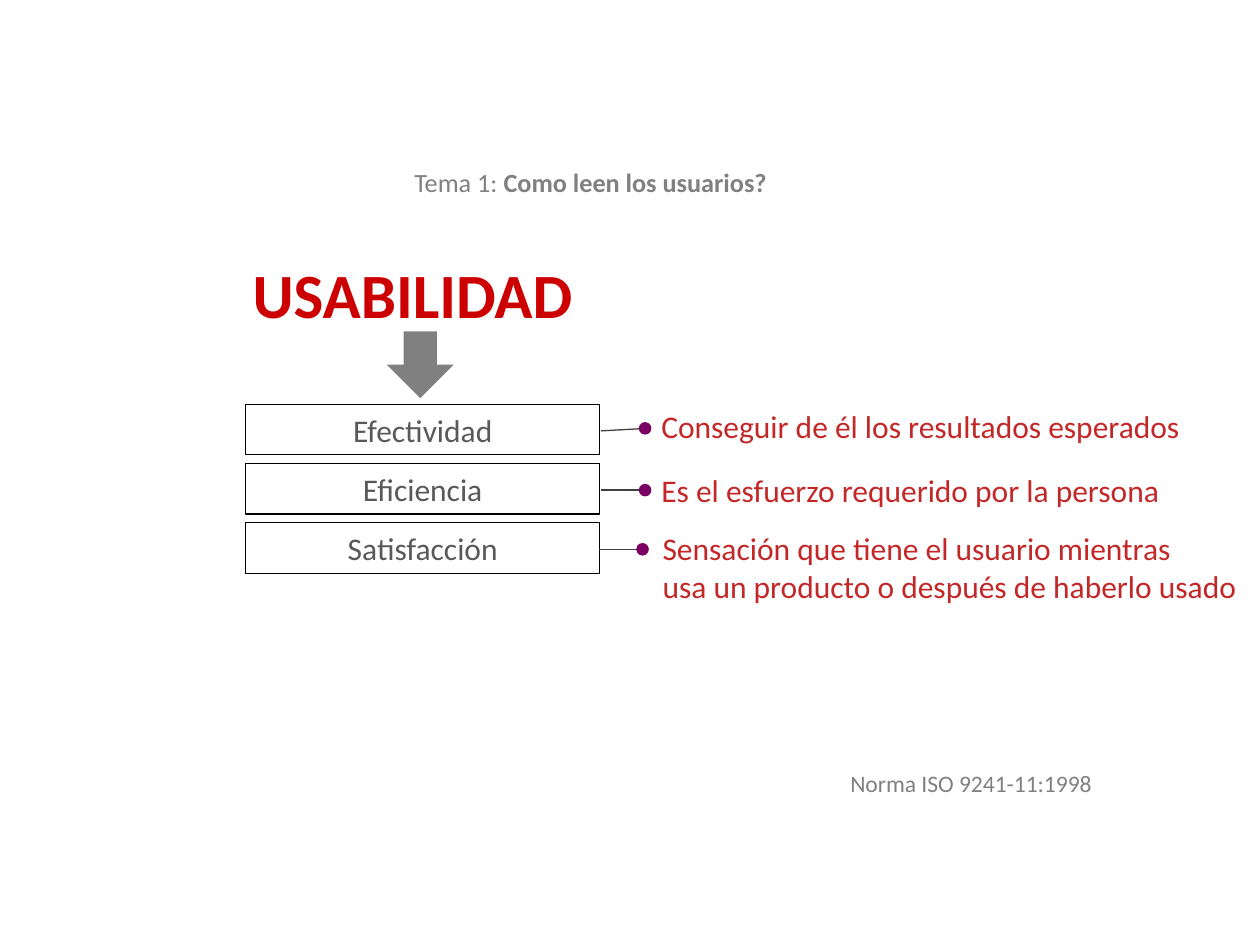
from typing import NamedTuple

from pptx import Presentation
from pptx.dml.color import RGBColor
from pptx.enum.shapes import MSO_CONNECTOR, MSO_SHAPE as Preset
from pptx.enum.text import MSO_ANCHOR as Anchor, MSO_AUTO_SIZE as AutoSize, PP_ALIGN as Align
from pptx.oxml.ns import qn
from pptx.util import Inches, Pt
from lxml.etree import SubElement

WIDTH, HEIGHT = 10, 7.5
RED, CRIMSON, GRAY, DARK_GRAY = "CC0000", "C32727", "808080", "595959"
PURPLE, LINE_GRAY, BLACK, WHITE = "7A0063", "404040", "000000", "FFFFFF"

BOX_LEFT, BOX_WIDTH, BOX_HEIGHT = 1.95, 2.81, 0.4
FIRST_ROW, ROW_STEP = 3.21, 0.47
DOT = 0.1


class Span(NamedTuple):
    text: str
    bold: bool = False


class Place(NamedTuple):
    left: float
    top: float
    width: float
    height: float


class Quality(NamedTuple):
    name: str
    meaning: list[str]
    note: Place
    line_start: float
    line_end: float
    dot_left: float
    dot_rise: float = 0


QUALITIES = [
    Quality("Efectividad", ["Conseguir de él los resultados esperados"],
            Place(5.15, 3.18, 4.37, 0.4), 4.77, 5.13, 5.07, 0.02),
    Quality("Eficiencia", ["Es el esfuerzo requerido por la persona"],
            Place(5.15, 3.69, 4.2, 0.4), 4.77, 5.13, 5.07),
    Quality("Satisfacción", ["Sensación que tiene el usuario mientras",
                             "usa un producto o después de haberlo usado"],
            Place(5.16, 4.15, 4.82, 0.71), 4.75, 5.12, 5.05),
]


def color(value: str) -> RGBColor:
    return RGBColor.from_string(value)


def inches(place: Place) -> list[int]:
    return [Inches(length) for length in place]


def write(shape, lines: list[list[Span]], size: float, ink: str,
          align=Align.LEFT, wrap: bool = True, anchor=Anchor.TOP) -> None:
    frame = shape.text_frame
    frame_format = {"word_wrap": wrap, "auto_size": AutoSize.NONE,
                    "vertical_anchor": anchor}
    for name, value in frame_format.items():
        setattr(frame, name, value)
    for index, spans in enumerate(lines):
        para = frame.add_paragraph() if index else frame.paragraphs[0]
        para.alignment = align
        for span in spans:
            run = para.add_run()
            run.text = span.text
            font_format = {"name": "Calibri", "size": Pt(size), "bold": span.bold}
            for name, value in font_format.items():
                setattr(run.font, name, value)
            run.font.color.rgb = color(ink)


def add_note(page, place: Place, lines: list[list[Span]], size: float, ink: str) -> None:
    write(page.shapes.add_textbox(*inches(place)), lines, size, ink, wrap=False)


def add_figure(page, preset, place: Place, fill: str, outline: str | None = None):
    figure = page.shapes.add_shape(preset, *inches(place))
    figure.shadow.inherit = False
    figure.fill.solid()
    figure.fill.fore_color.rgb = color(fill)
    if outline:
        figure.line.color.rgb = color(outline)
        figure.line.width = Pt(0.75)
    else:
        figure.line.fill.background()
    return figure


def add_quality(page, quality: Quality, row: int) -> None:
    top = FIRST_ROW + row * ROW_STEP
    middle = top + BOX_HEIGHT / 2 + 0.01
    dot_middle = middle - quality.dot_rise

    box = add_figure(page, Preset.RECTANGLE,
                     Place(BOX_LEFT, top, BOX_WIDTH, BOX_HEIGHT), WHITE, BLACK)
    write(box, [[Span(quality.name)]], 18, DARK_GRAY, Align.CENTER)
    add_note(page, quality.note, [[Span(line)] for line in quality.meaning], 18, CRIMSON)

    link = page.shapes.add_connector(
        MSO_CONNECTOR.STRAIGHT, Inches(quality.line_start), Inches(middle),
        Inches(quality.line_end), Inches(dot_middle))
    link.line.color.rgb = color(LINE_GRAY)
    link.line.width = Pt(0.75)
    SubElement(link._element.spPr, qn("a:effectLst"))
    add_figure(page, Preset.OVAL,
               Place(quality.dot_left, dot_middle - DOT / 2, DOT, DOT), PURPLE)


def main() -> None:
    deck = Presentation()
    deck.slide_width, deck.slide_height = Inches(WIDTH), Inches(HEIGHT)
    page = deck.slides.add_slide(deck.slide_layouts[5])

    title = page.shapes.title
    title.left, title.top, title.width, title.height = inches(Place(1.78, 1.98, 2.99, 0.71))
    write(title, [[Span("USABILIDAD", True)]], 36, RED, Align.CENTER)

    arrow = add_figure(page, Preset.RIGHT_ARROW, Place(3.07, 2.63, 0.53, 0.53), GRAY)
    arrow.rotation = 90
    for row, quality in enumerate(QUALITIES):
        add_quality(page, quality, row)

    add_note(page, Place(6.65, 6.05, 2.15, 0.33),
             [[Span("Norma ISO 9241-11:1998")]], 13.5, GRAY)
    add_note(page, Place(3.19, 1.27, 3.03, 0.35),
             [[Span("Tema 1: "), Span("Como leen los usuarios?", True)]], 15, GRAY)
    deck.save("out.pptx")


if __name__ == "__main__":
    main()
